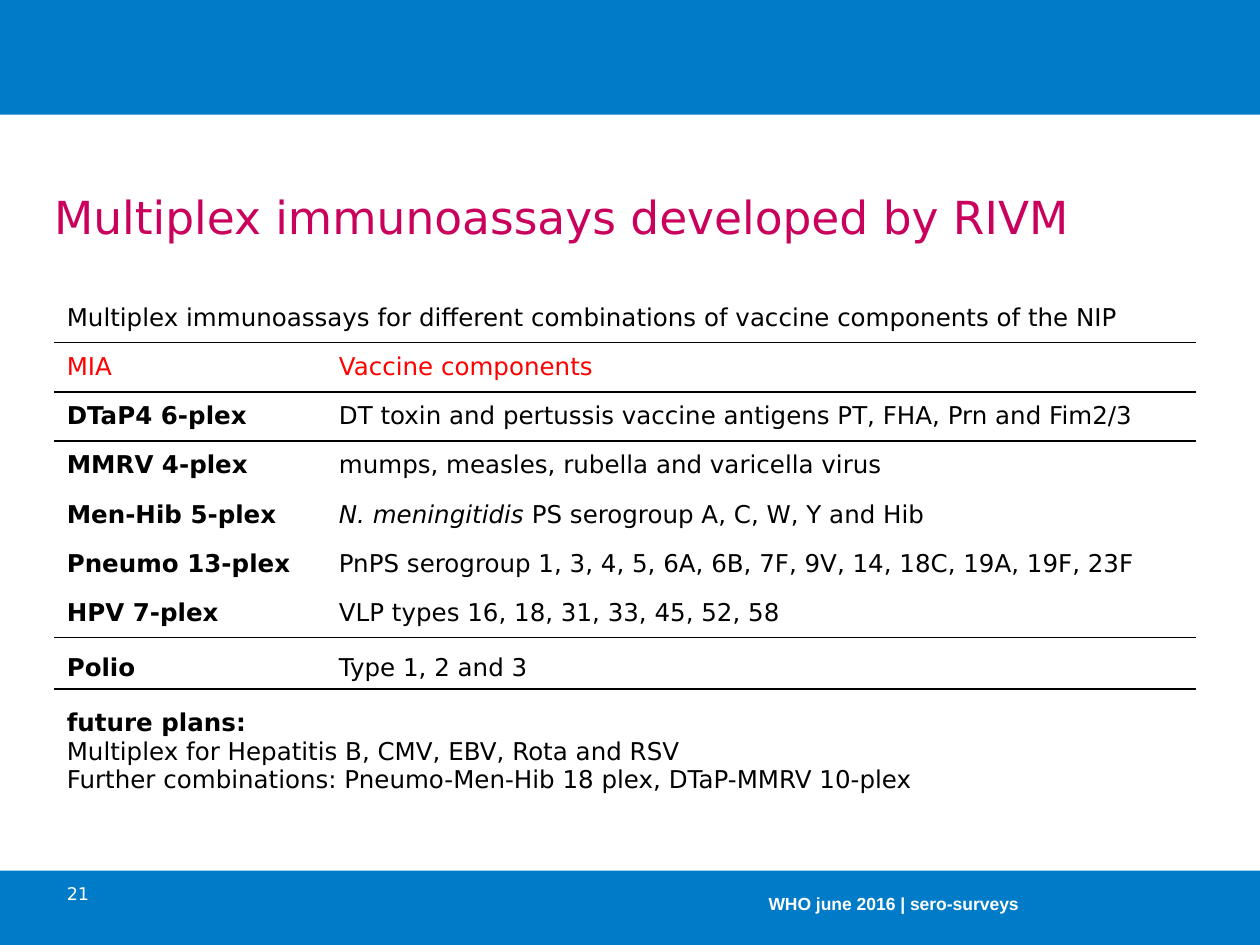
"""Build the slide on multiplex immunoassays: title, assay table and footer."""
from lxml import etree
from pptx import Presentation
from pptx import util as u
from pptx.dml.color import RGBColor
from pptx.enum import shapes, text
from pptx.oxml.ns import qn

COLORS = {"band": "007BC7", "title": "CA005D", "header": "FF0000",
          "body": "000000", "footer": "FFFFFF"}
FONT = "DejaVu Sans"
NO_STYLE = "{2D5ABB26-0587-4C30-8999-92F81FD0307C}"
ASSAYS = [
    ("MIA", "Vaccine components"),
    ("DTaP4 6-plex", "DT toxin and pertussis vaccine antigens PT, FHA, Prn and Fim2/3"),
    ("MMRV 4-plex", "mumps, measles, rubella and varicella virus"),
    ("Men-Hib 5-plex", "N. meningitidis PS serogroup A, C, W, Y and Hib"),
    ("Pneumo 13-plex", "PnPS serogroup 1, 3, 4, 5, 6A, 6B, 7F, 9V, 14, 18C, 19A, 19F, 23F"),
    ("HPV 7-plex", "VLP types 16, 18, 31, 33, 45, 52, 58"),
    ("Polio", "Type 1, 2 and 3"),
]
INTRO = "Multiplex immunoassays for different combinations of vaccine components of the NIP"
PLANS = ["future plans:",
         "Multiplex for Hepatitis B, CMV, EBV, Rota and RSV",
         "Further combinations: Pneumo-Men-Hib 18 plex, DTaP-MMRV 10-plex"]
SPECIES = "N. meningitidis"
RULED_ROWS = (0, 1, 6)
LEFT, TABLE_TOP = u.Inches(0.43), u.Inches(2.33)
COLUMNS = (2.16, 6.9)
ROWS = [0.39] * 7 + [0.41, 0.89]


def style(paragraph, size, color, bold=False, name=FONT):
    font = paragraph.font
    font.size, font.bold, font.name = u.Pt(size), bold, name
    font.color.rgb = RGBColor.from_string(COLORS[color])


def clear_margins(frame):
    frame.margin_left = frame.margin_right = frame.margin_top = frame.margin_bottom = 0


deck = Presentation()
deck.slide_width, deck.slide_height = u.Inches(10), u.Inches(7.5)
slide = deck.slides.add_slide(deck.slide_layouts[5])

for left, top, width, height in ((0, 6.91, 10, 0.59), (0, -0.03, 10.04, 0.94)):
    band = slide.shapes.add_shape(shapes.MSO_SHAPE.RECTANGLE, u.Inches(left),
                                  u.Inches(top), u.Inches(width), u.Inches(height))
    band.shadow.inherit = False
    band.fill.solid()
    band.fill.fore_color.rgb = RGBColor.from_string(COLORS["band"])
    band.line.fill.background()

title = slide.shapes.title
title.left, title.top = LEFT, u.Inches(1.46)
title.width, title.height = u.Inches(8.5), u.Inches(0.47)
heading = title.text_frame
heading.text = "Multiplex immunoassays developed by RIVM"
clear_margins(heading)
heading.word_wrap = False
heading.auto_size = text.MSO_AUTO_SIZE.NONE
heading.vertical_anchor = text.MSO_ANCHOR.BOTTOM
heading.paragraphs[0].alignment = text.PP_ALIGN.LEFT
style(heading.paragraphs[0], 26, "title")

assays = slide.shapes.add_table(len(ROWS), len(COLUMNS), LEFT, TABLE_TOP,
                                u.Inches(sum(COLUMNS)), u.Inches(sum(ROWS))).table
assays.first_row = assays.horz_banding = False
assays._tbl.tblPr.find(qn("a:tableStyleId")).text = NO_STYLE
for column, width in zip(assays.columns, COLUMNS):
    column.width = u.Inches(width)
for row, height in zip(assays.rows, ROWS):
    row.height = u.Inches(height)

last = len(ROWS) - 1
for r in (0, last):
    assays.cell(r, 0).merge(assays.cell(r, 1))
assays.cell(0, 0).text = INTRO
assays.cell(last, 0).text = "\n".join(PLANS)
for r, entries in enumerate(ASSAYS, start=1):
    for c, entry in enumerate(entries):
        cell = assays.cell(r, c)
        if entry.startswith(SPECIES):
            paragraph = cell.text_frame.paragraphs[0]
            species = paragraph.add_run()
            species.text = SPECIES
            species.font.italic = True
            paragraph.add_run().text = entry[len(SPECIES):]
        else:
            cell.text = entry

for r in range(len(ROWS)):
    for c in range(len(COLUMNS)):
        cell = assays.cell(r, c)
        cell.fill.background()
        cell.vertical_anchor = text.MSO_ANCHOR.BOTTOM if r >= last - 1 else text.MSO_ANCHOR.MIDDLE
        for i, paragraph in enumerate(cell.text_frame.paragraphs):
            style(paragraph, 14, "header" if r == 1 else "body",
                  bold=r > 1 and c == 0 and i == 0)
        for side, ruled in (("a:lnB", r in RULED_ROWS), ("a:lnT", r - 1 in RULED_ROWS)):
            if ruled:
                rule = etree.Element(qn(side), w=str(u.Pt(1)))
                fill = etree.SubElement(rule, qn("a:solidFill"))
                etree.SubElement(fill, qn("a:srgbClr"), val=COLORS["body"])
                cell._tc.tcPr.insert(0, rule)

for words, left, top, width, height, name, bold in (
        ("21", 0.53, 7.01, 0.39, 0.16, FONT, False),
        ("WHO june 2016 | sero-surveys", 6.1, 7.09, 3.9, 0.2, "Arial", True)):
    footer = slide.shapes.add_textbox(u.Inches(left), u.Inches(top),
                                      u.Inches(width), u.Inches(height)).text_frame
    footer.text = words
    footer.word_wrap = True
    clear_margins(footer)
    style(footer.paragraphs[0], 10, "footer", bold, name)

deck.save("out.pptx")
